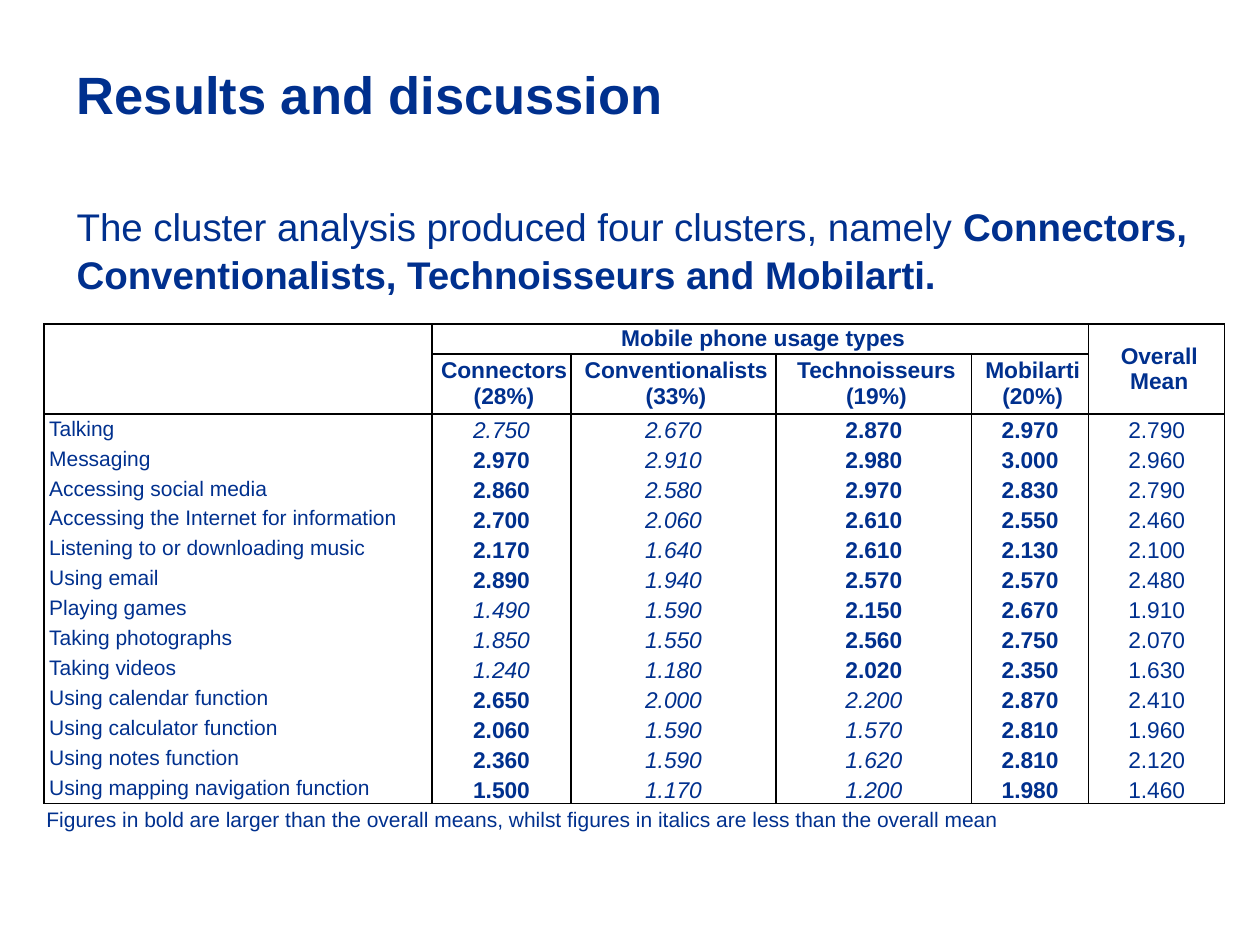
from dataclasses import dataclass
from typing import NamedTuple

from lxml.etree import SubElement
from pptx import Presentation
from pptx.dml.color import RGBColor
from pptx.enum.text import MSO_ANCHOR as Anchor, MSO_AUTO_SIZE as AutoSize, PP_ALIGN as Align
from pptx.oxml.ns import qn
from pptx.util import Inches, Pt


@dataclass(frozen=True)
class Theme:
    font: str = "Arial"
    ink: str = "00308E"
    rule: str = "000000"
    paper: str = "FFFFFF"
    title: int = 30
    body: int = 22
    figure: int = 13
    label: int = 12
    rule_width: int = 1


class Span(NamedTuple):
    text: str
    size: int
    bold: bool = False
    italic: bool = False


class Usage(NamedTuple):
    activity: str
    clusters: tuple[float, ...]
    overall: float


THEME = Theme()
TYPES = ("Connectors (28%)", "Conventionalists (33%)", "Technoisseurs (19%)", "Mobilarti (20%)")
USAGES = [
    Usage("Talking", (2.75, 2.67, 2.87, 2.97), 2.79),
    Usage("Messaging", (2.97, 2.91, 2.98, 3.0), 2.96),
    Usage("Accessing social media", (2.86, 2.58, 2.97, 2.83), 2.79),
    Usage("Accessing the Internet for information", (2.7, 2.06, 2.61, 2.55), 2.46),
    Usage("Listening to or downloading music", (2.17, 1.64, 2.61, 2.13), 2.1),
    Usage("Using email", (2.89, 1.94, 2.57, 2.57), 2.48),
    Usage("Playing games", (1.49, 1.59, 2.15, 2.67), 1.91),
    Usage("Taking photographs", (1.85, 1.55, 2.56, 2.75), 2.07),
    Usage("Taking videos", (1.24, 1.18, 2.02, 2.35), 1.63),
    Usage("Using calendar function", (2.65, 2.0, 2.2, 2.87), 2.41),
    Usage("Using calculator function", (2.06, 1.59, 1.57, 2.81), 1.96),
    Usage("Using notes function", (2.36, 1.59, 1.62, 2.81), 2.12),
    Usage("Using mapping navigation function", (1.5, 1.17, 1.2, 1.98), 1.46),
]
COLUMN_WIDTHS = (3.08, 1.1, 1.63, 1.55, 0.93, 1.08)
HEADER_ROWS = 2


def write(frame, spans: list[Span], align: Align, anchor: Anchor, indent: float = 0) -> None:
    """Fill the first paragraph of a text frame or cell with formatted spans."""
    frame.vertical_anchor = anchor
    para = getattr(frame, "text_frame", frame).paragraphs[0]
    para.alignment = align
    if indent:
        para._p.get_or_add_pPr().set("marL", str(Inches(indent)))
    for span in spans:
        run = para.add_run()
        run.text = span.text
        formats = {"name": THEME.font, "size": Pt(span.size),
                   "bold": span.bold, "italic": span.italic}
        for name, value in formats.items():
            setattr(run.font, name, value)
        run.font.color.rgb = RGBColor.from_string(THEME.ink)


def style_cell(cell, ruled_sides: str) -> None:
    """Remove the margins, rule the named sides (from "LRTB") and fill the cell."""
    for side in ("left", "right", "top", "bottom"):
        setattr(cell, f"margin_{side}", 0)
    properties = cell._tc.get_or_add_tcPr()
    for side in "LRTB":
        line = SubElement(properties, qn(f"a:ln{side}"), w=str(Pt(THEME.rule_width)))
        if side in ruled_sides:
            fill = SubElement(line, qn("a:solidFill"))
            SubElement(fill, qn("a:srgbClr"), val=THEME.rule)
        else:
            SubElement(line, qn("a:noFill"))
    cell.fill.solid()
    cell.fill.fore_color.rgb = RGBColor.from_string(THEME.paper)


def add_usage_table(page) -> None:
    row_count = HEADER_ROWS + len(USAGES)
    height = Inches(3.81)
    table = page.shapes.add_table(row_count, len(COLUMN_WIDTHS), Inches(0.35), Inches(2.57),
                                  Inches(sum(COLUMN_WIDTHS)), height).table
    table.first_row = table.horz_banding = False
    for column, width in zip(table.columns, COLUMN_WIDTHS):
        column.width = Inches(width)
    # The second header row holds two lines, so it counts twice
    line_height = height // (row_count + 1)
    for index, row in enumerate(table.rows):
        row.height = line_height * (2 if index == 1 else 1)
        sides = "LR"
        if index <= HEADER_ROWS:
            sides += "T"
        if index < HEADER_ROWS or index == row_count - 1:
            sides += "B"
        for cell in row.cells:
            style_cell(cell, sides)

    # Header with merged cells
    last = len(COLUMN_WIDTHS) - 1
    table.cell(0, 0).merge(table.cell(1, 0))
    table.cell(0, 1).merge(table.cell(0, last - 1))
    table.cell(0, last).merge(table.cell(1, last))
    headings = {(0, 0): "", (0, 1): "Mobile phone usage types", (0, last): "Overall Mean"}
    headings |= {(1, column): name for column, name in enumerate(TYPES, 1)}
    for position, text in headings.items():
        write(table.cell(*position), [Span(text, THEME.figure, bold=True)],
              Align.CENTER, Anchor.MIDDLE, 0.04)

    # Means: bold above the overall mean, italic below it
    for row, usage in enumerate(USAGES, HEADER_ROWS):
        write(table.cell(row, 0), [Span(usage.activity, THEME.label)],
              Align.JUSTIFY, Anchor.MIDDLE, 0.04)
        for column, mean in enumerate((*usage.clusters, usage.overall), 1):
            span = Span(f"{mean:.3f}", THEME.figure, mean > usage.overall, mean < usage.overall)
            write(table.cell(row, column), [span], Align.CENTER, Anchor.BOTTOM)


def main() -> None:
    deck = Presentation()
    deck.slide_width, deck.slide_height = Inches(10), Inches(7.5)
    page = deck.slides.add_slide(deck.slide_layouts[5])

    # Title
    title = page.shapes.title
    title.left, title.top, title.width, title.height = map(Inches, (0.51, 0.25, 9.13, 0.98))
    write(title.text_frame, [Span("Results and discussion", THEME.title, bold=True)],
          Align.LEFT, Anchor.MIDDLE)

    # Introduction
    intro = page.shapes.add_textbox(*map(Inches, (0.51, 1.55, 9.13, 0.95))).text_frame
    intro.word_wrap = True
    write(intro, [
        Span("The cluster analysis produced four clusters, namely ", THEME.body),
        Span("Connectors, Conventionalists, Technoisseurs and Mobilarti.", THEME.body, bold=True),
    ], Align.LEFT, Anchor.TOP)
    intro.paragraphs[0].line_spacing = 1.04

    add_usage_table(page)

    # Footnote
    note = page.shapes.add_textbox(*map(Inches, (0.27, 6.35, 7.81, 0.3))).text_frame
    note.word_wrap = False
    note.auto_size = AutoSize.SHAPE_TO_FIT_TEXT
    write(note, [Span("Figures in bold are larger than the overall means, whilst figures in "
                      "italics are less than the overall mean", THEME.label)],
          Align.JUSTIFY, Anchor.MIDDLE)

    deck.save("out.pptx")


if __name__ == "__main__":
    main()
